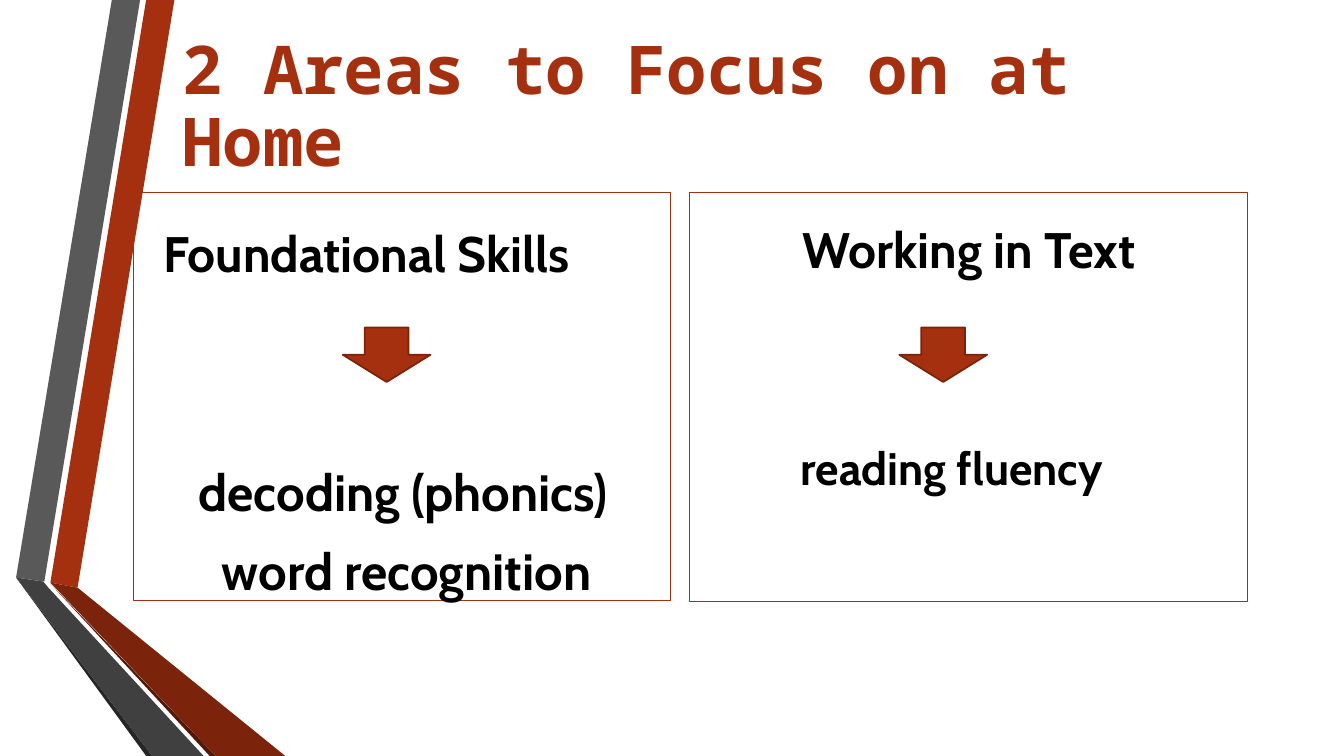
from dataclasses import dataclass

from lxml import etree
from pptx import Presentation
from pptx.dml.color import RGBColor
from pptx.enum.shapes import MSO_SHAPE
from pptx.enum.text import MSO_ANCHOR, MSO_AUTO_SIZE, PP_ALIGN
from pptx.oxml.ns import qn
from pptx.util import Pt

PX = 9144  # EMU per px, 100 px to the inch
DOWN_ARROW = MSO_SHAPE.DOWN_ARROW
TOP, MIDDLE = MSO_ANCHOR.TOP, MSO_ANCHOR.MIDDLE
NO_AUTOFIT = MSO_AUTO_SIZE.NONE
LEFT = PP_ALIGN.LEFT
TWO_CONTENT = 3


@dataclass(frozen=True)
class Theme:
    accent: str = "A5300F"
    arrow_line: str = "7A240B"
    text: str = "000000"
    title_font: str = "Noto Sans Mono"
    body_font: str = "Cabin"
    title_size: float = 48
    heading_size: float = 35.6
    skill_size: float = 36.4
    fluency_size: float = 32.5


THEME = Theme()

# Ribbon facets: colour and corner points in px
RIBBON = [
    ("A5300F", [(50, 578), (77, 583), (173, 0), (145, 0)]),
    ("595959", [(139, 0), (111, 0), (16, 573), (44, 577)]),
    ("262626", [(16, 573), (145, 750), (151, 750)]),
    ("521808", [(50, 579), (208, 750), (214, 750)]),
    ("7C240B", [(50, 578), (214, 750), (283, 750), (77, 583)]),
    ("404040", [(202, 750), (48, 583), (43, 577), (16, 573), (151, 750)]),
]

# Panel lines: text, size, indent in px, space before in points
FOUNDATIONAL = [
    ("Foundational Skills", THEME.heading_size, 20, 0),
    ("decoding (phonics)", THEME.skill_size, 55, 127),
    ("word recognition", THEME.skill_size, 78, 13),
]
WORKING = [
    ("Working in Text", THEME.heading_size, 102, 0),
    ("reading fluency", THEME.fluency_size, 100, 115),
]


def place(shape, box):
    shape.left, shape.top, shape.width, shape.height = (n * PX for n in box)


def fill_with(shape, colour):
    shape.fill.solid()
    shape.fill.fore_color.rgb = RGBColor.from_string(colour)


def style_line(shape, colour, width):
    shape.line.color.rgb = RGBColor.from_string(colour)
    shape.line.width = Pt(width)


def style_font(para, name, size, colour):
    font = para.font
    font.name, font.size, font.bold = name, Pt(size), True
    font.color.rgb = RGBColor.from_string(colour)


def add_ribbon(page, box):
    """Folded ribbon, kept behind the placeholders."""
    left, top = box
    for colour, points in RIBBON:
        corners = [(left + x, top + y) for x, y in points]
        builder = page.shapes.build_freeform(*corners[0], scale=PX)
        builder.add_line_segments(corners[1:], close=True)
        facet = builder.convert_to_shape()
        facet.shadow.inherit = False
        fill_with(facet, colour)
        facet.line.fill.background()
        page.shapes.title.element.addprevious(facet.element)


def add_title(page, box, text):
    title = page.shapes.title
    place(title, box)
    frame = title.text_frame
    frame.text = text
    frame.word_wrap = True
    frame.auto_size = NO_AUTOFIT
    frame.vertical_anchor = MIDDLE
    para = frame.paragraphs[0]
    para.alignment = LEFT
    para.line_spacing = 0.9
    style_font(para, THEME.title_font, THEME.title_size, THEME.accent)


def add_panel(page, panel, box, inset, lines):
    """Outlined panel with a heading, an arrow and the skills below it."""
    place(panel, box)
    style_line(panel, THEME.accent, 0.75)
    frame = panel.text_frame
    frame.word_wrap = True
    frame.auto_size = NO_AUTOFIT
    frame.vertical_anchor = TOP
    frame.margin_top = inset * PX
    frame.text = "\n".join(line[0] for line in lines)
    for para, (_, size, indent, before) in zip(frame.paragraphs, lines):
        para.alignment = LEFT
        para.line_spacing = 1.0
        para.space_before, para.space_after = Pt(before), Pt(0)
        style_font(para, THEME.body_font, size, THEME.text)
        properties = para._p.get_or_add_pPr()
        properties.set("marL", str(indent * PX))
        properties.set("indent", "0")
        properties.insert_element_before(
            etree.SubElement(properties, qn("a:buNone")), "a:tabLst", "a:defRPr")

    # Arrow from the heading to the skills
    left, top = box[:2]
    arrow = page.shapes.add_shape(
        DOWN_ARROW, *(n * PX for n in (left + 208, top + 134, 87, 54)))
    arrow.shadow.inherit = False
    fill_with(arrow, THEME.accent)
    style_line(arrow, THEME.arrow_line, 1.25)


def build_focus_slide(deck):
    page = deck.slides.add_slide(deck.slide_layouts[TWO_CONTENT])
    add_ribbon(page, (0, 0))
    add_title(page, (171, 48, 1096, 120), "2 Areas to Focus on at Home")
    add_panel(page, page.placeholders[1], (132, 191, 533, 405), 30, FOUNDATIONAL)
    add_panel(page, page.placeholders[2], (684, 191, 553, 406), 26, WORKING)


def main():
    deck = Presentation()
    deck.slide_width, deck.slide_height = 1333 * PX, 750 * PX
    build_focus_slide(deck)
    deck.save("out.pptx")


if __name__ == "__main__":
    main()
